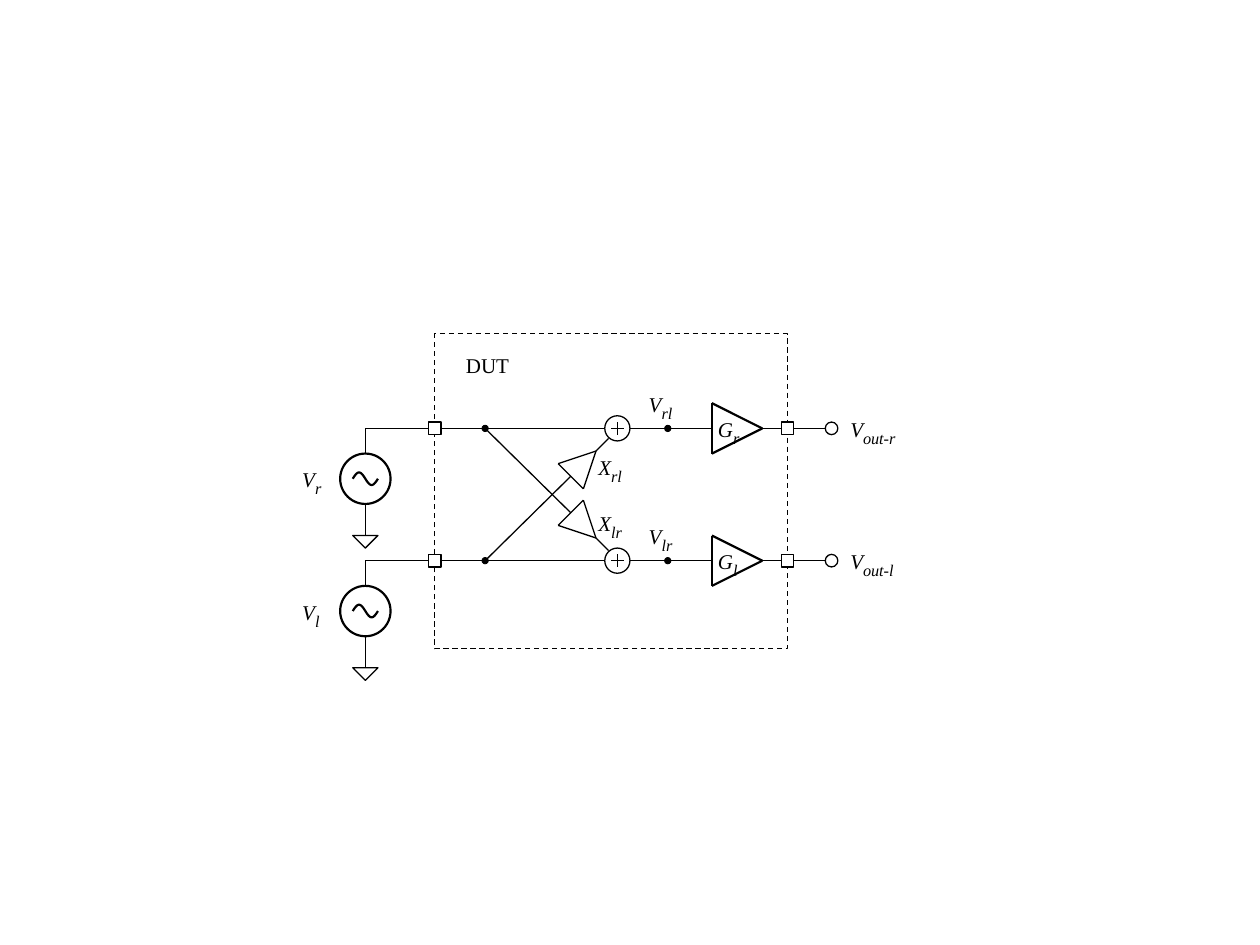
import math

import pptx
import pptx.dml.color
import pptx.enum.dml
import pptx.enum.shapes
import pptx.enum.text
import pptx.oxml
import pptx.oxml.ns
import pptx.util

Inches = pptx.util.Inches
SHAPES = pptx.enum.shapes.MSO_SHAPE
COLORS = {"ink": "000000", "paper": "FFFFFF"}
FONT = "Times New Roman"
THIN, THICK = 0.75, 1.25


def rgb(name):
    return pptx.dml.color.RGBColor.from_string(COLORS[name])


def add_span(para, text, size=12, italic=False, baseline=None):
    span = para.add_run()
    span.text = text
    span.font.name = FONT
    span.font.size = pptx.util.Pt(size)
    span.font.italic = italic
    span.font.color.rgb = rgb("ink")
    if baseline is not None:
        span.font._element.set("baseline", str(baseline))


class Circuit:
    """Draws circuit symbols on one slide."""

    def __init__(self, slide):
        self.shapes = slide.shapes

    def style(self, shape, fill=None, weight=THIN):
        shape.shadow.inherit = False
        if fill:
            shape.fill.solid()
            shape.fill.fore_color.rgb = rgb(fill)
        else:
            shape.fill.background()
        shape.line.color.rgb = rgb("ink")
        shape.line.width = pptx.util.Pt(weight)
        return shape

    def line(self, x1, y1, x2, y2, weight=THIN):
        wire = self.shapes.add_connector(
            pptx.enum.shapes.MSO_CONNECTOR.STRAIGHT,
            Inches(x1), Inches(y1), Inches(x2), Inches(y2))
        wire.line.color.rgb = rgb("ink")
        wire.line.width = pptx.util.Pt(weight)
        wire._element.spPr.append(
            pptx.oxml.parse_xml("<a:effectLst %s/>" % pptx.oxml.ns.nsdecls("a")))

    def triangle(self, corners, weight=THIN):
        for start, end in zip(corners, corners[1:] + corners[:1]):
            self.line(*start, *end, weight=weight)

    def preset(self, kind, left, top, width, height, **look):
        return self.style(self.shapes.add_shape(
            kind, Inches(left), Inches(top), Inches(width), Inches(height)), **look)

    def centered(self, kind, x, y, size, **look):
        return self.preset(kind, x - size / 2, y - size / 2, size, size, **look)

    def outline(self, points, closed=False, **look):
        points = [(Inches(x), Inches(y)) for x, y in points]
        builder = self.shapes.build_freeform(*points[0])
        builder.add_line_segments(points[1:], close=closed)
        return self.style(builder.convert_to_shape(), **look)

    def label(self, left, top, width, text, sub=None):
        box = self.shapes.add_textbox(
            Inches(left), Inches(top), Inches(width), Inches(0.35))
        box.text_frame.word_wrap = True
        para = box.text_frame.paragraphs[0]
        add_span(para, text, italic=sub is not None)
        if sub:
            add_span(para, sub, size=16, italic=True, baseline=-25000)

    def source(self, x, y):
        """Sine generator below the signal line at y, with its ground."""
        middle = y + 0.4
        self.line(x, y, x, y + 0.2)
        self.line(x, y + 0.6, x, y + 0.85)
        self.centered(SHAPES.OVAL, x, middle, 0.4, fill="paper", weight=THICK)
        steps = 32
        self.outline([(x - 0.1 + 0.2 * i / steps,
                       middle - 0.05 * math.sin(2 * math.pi * i / steps))
                      for i in range(steps + 1)], weight=THICK)
        ground = y + 0.85
        self.outline([(x - 0.1, ground), (x + 0.1, ground), (x, ground + 0.1)],
                     closed=True, fill="paper")

    def adder(self, x, y):
        self.centered(SHAPES.OVAL, x, y, 0.2, fill="paper")
        self.line(x - 0.05, y, x + 0.05, y)
        self.line(x, y - 0.05, x, y + 0.05)

    def crosstalk(self, adder_y, other_y):
        """Diagonal amplifier from the other channel's node to this adder."""
        sign = 1 if other_y > adder_y else -1

        def level(offset):
            return adder_y + sign * offset

        self.line(3.85, other_y, 4.53, level(0.38))
        self.triangle([(4.43, level(0.28)), (4.63, level(0.48)), (4.73, level(0.18))])
        self.line(4.73, level(0.18), 4.83, level(0.08))

    def channel(self, y, other_y, name, cross, cross_top):
        # Input side
        self.source(2.9, y)
        self.label(2.3, y + 0.2, 0.5, "V", name)
        self.line(2.9, y, 4.8, y)
        # Crosstalk path and summing point
        self.crosstalk(y, other_y)
        self.adder(4.9, y)
        self.label(4.65, cross_top, 0.55, "X", cross)
        self.label(5.05, y - 0.4, 0.55, "V", cross)
        # Gain stage and output
        self.line(5, y, 5.65, y)
        self.triangle([(5.65, y - 0.2), (6.05, y), (5.65, y + 0.2)], weight=THICK)
        self.label(5.6, y - 0.2, 0.5, "G", name)
        self.line(6.05, y, 6.55, y)
        self.centered(SHAPES.OVAL, 6.6, y, 0.1)
        self.label(6.65, y - 0.2, 0.7, "V", "out-" + name)
        # Nodes
        for x in (3.85, 5.3):
            self.centered(SHAPES.OVAL, x, y, 0.05, fill="ink", weight=0.5)


def main():
    deck = pptx.Presentation()
    deck.slide_width, deck.slide_height = Inches(10), Inches(7.5)
    circuit = Circuit(deck.slides.add_slide(deck.slide_layouts[6]))

    # Two coupled channels
    right, left = 3.4, 4.45
    circuit.channel(right, left, "r", "rl", 3.5)
    circuit.channel(left, right, "l", "lr", 3.95)

    # Device boundary with its terminals
    boundary = circuit.preset(SHAPES.RECTANGLE, 3.45, 2.65, 2.8, 2.5)
    boundary.line.dash_style = pptx.enum.dml.MSO_LINE.DASH
    circuit.label(3.6, 2.75, 0.7, "DUT")
    for x in (3.45, 6.25):
        for y in (right, left):
            circuit.centered(SHAPES.RECTANGLE, x, y, 0.1, fill="paper")

    deck.save("out.pptx")


if __name__ == "__main__":
    main()
